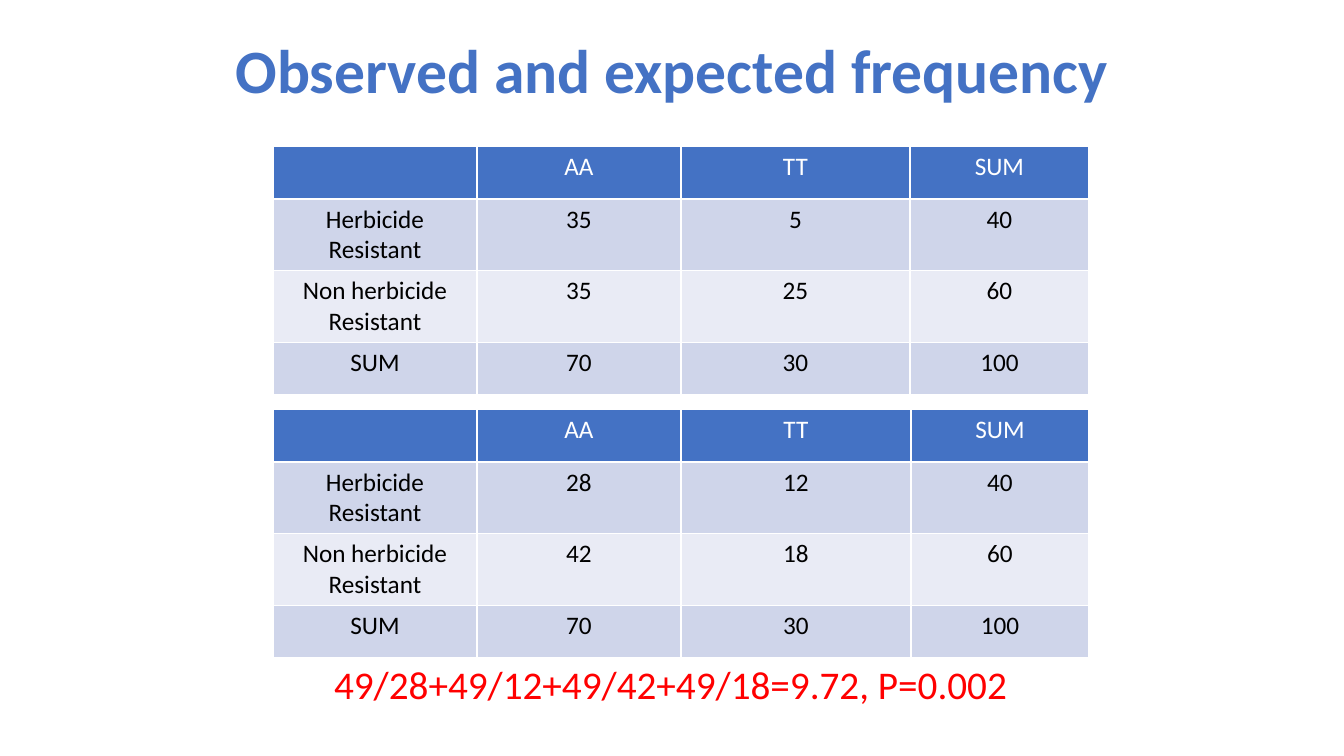
import pptx
import pptx.dml.color
import pptx.enum.text
import pptx.oxml
import pptx.oxml.ns
import pptx.util

# Content
TITLE = "Observed and expected frequency"
RESULT = "49/28+49/12+49/42+49/18=9.72, P=0.002"
HEADER = ["", "AA", "TT", "SUM"]
ROW_LABELS = ["Herbicide Resistant", "Non herbicide\nResistant", "SUM"]
TABLES = [
    {"top": 146, "columns": [204, 204, 229, 179],
     "counts": [[35, 5, 40], [35, 25, 60], [70, 30, 100]]},
    {"top": 409, "columns": [204, 204, 230, 178],
     "counts": [[28, 12, 40], [42, 18, 60], [70, 30, 100]]},
]

# Layout in px
SLIDE_SIZE = (1344, 756)
TITLE_BOX = (93, 0, 1159, 147)
RESULT_BOX = (252, 655, 837, 58)
TABLE_LEFT, HEADER_HEIGHT, ROW_HEIGHT = 273, 53, 52
EMU_PER_PX = 914400 / 100.8

# Format
COLORS = {"header": "4472C4", "odd": "CFD5EA", "even": "E9EBF5",
          "white": "FFFFFF", "black": "000000", "result": "FF0000"}
TITLE_FONT = {"name": "Calibri", "size": pptx.util.Pt(44), "bold": True}
CELL_FONT = {"name": "Calibri", "size": pptx.util.Pt(18), "bold": False}
RESULT_FONT = {"name": "Calibri", "size": pptx.util.Pt(28), "bold": False}
BORDER_SIDES = ("L", "R", "T", "B")
BORDER_WIDTH = pptx.util.Pt(1)


def px(length):
    return pptx.util.Emu(round(length * EMU_PER_PX))


def rgb(color):
    return pptx.dml.color.RGBColor.from_string(COLORS[color])


def write(text_frame, text, font_values, color, line_spacing=None):
    text_frame.text = text
    for paragraph in text_frame.paragraphs:
        paragraph.alignment = pptx.enum.text.PP_ALIGN.CENTER
        paragraph.line_spacing = line_spacing
        for run in paragraph.runs:
            for attribute, value in font_values.items():
                setattr(run.font, attribute, value)
            run.font.color.rgb = rgb(color)


def set_borders(cell):
    properties = cell._tc.get_or_add_tcPr()
    for index, side in enumerate(BORDER_SIDES):
        border = pptx.oxml.parse_xml(
            f'<a:ln{side} {pptx.oxml.ns.nsdecls("a")} w="{BORDER_WIDTH}">'
            f'<a:solidFill><a:srgbClr val="{COLORS["white"]}"/></a:solidFill>'
            f'</a:ln{side}>')
        properties.insert(index, border)


def add_frequency_table(slide, top, columns, counts):
    rows = [HEADER] + [[label] + values for label, values in zip(ROW_LABELS, counts)]
    height = HEADER_HEIGHT + ROW_HEIGHT * len(counts)
    table = slide.shapes.add_table(len(rows), len(columns), px(TABLE_LEFT), px(top),
                                   px(sum(columns)), px(height)).table
    for column, width in zip(table.columns, columns):
        column.width = px(width)
    for row_index, values in enumerate(rows):
        is_header = row_index == 0
        table.rows[row_index].height = px(HEADER_HEIGHT if is_header else ROW_HEIGHT)
        fill = "header" if is_header else ("odd" if row_index % 2 else "even")
        for column_index, value in enumerate(values):
            cell = table.cell(row_index, column_index)
            cell.fill.solid()
            cell.fill.fore_color.rgb = rgb(fill)
            set_borders(cell)
            if value != "":
                write(cell.text_frame, str(value), CELL_FONT,
                      "white" if is_header else "black")


def main():
    presentation = pptx.Presentation()
    presentation.slide_width, presentation.slide_height = map(px, SLIDE_SIZE)
    slide = presentation.slides.add_slide(presentation.slide_layouts[5])

    # Title
    title = slide.shapes.title
    for attribute, length in zip(("left", "top", "width", "height"), TITLE_BOX):
        setattr(title, attribute, px(length))
    write(title.text_frame, TITLE, TITLE_FONT, "header", 0.9)
    title.text_frame.vertical_anchor = pptx.enum.text.MSO_ANCHOR.MIDDLE
    title.text_frame.auto_size = pptx.enum.text.MSO_AUTO_SIZE.NONE

    # Observed and expected tables
    for table in TABLES:
        add_frequency_table(slide, **table)

    # Test result
    result = slide.shapes.add_textbox(*map(px, RESULT_BOX))
    result.text_frame.word_wrap = True
    result.text_frame.auto_size = pptx.enum.text.MSO_AUTO_SIZE.SHAPE_TO_FIT_TEXT
    write(result.text_frame, RESULT, RESULT_FONT, "result")

    presentation.save("out.pptx")


if __name__ == "__main__":
    main()
